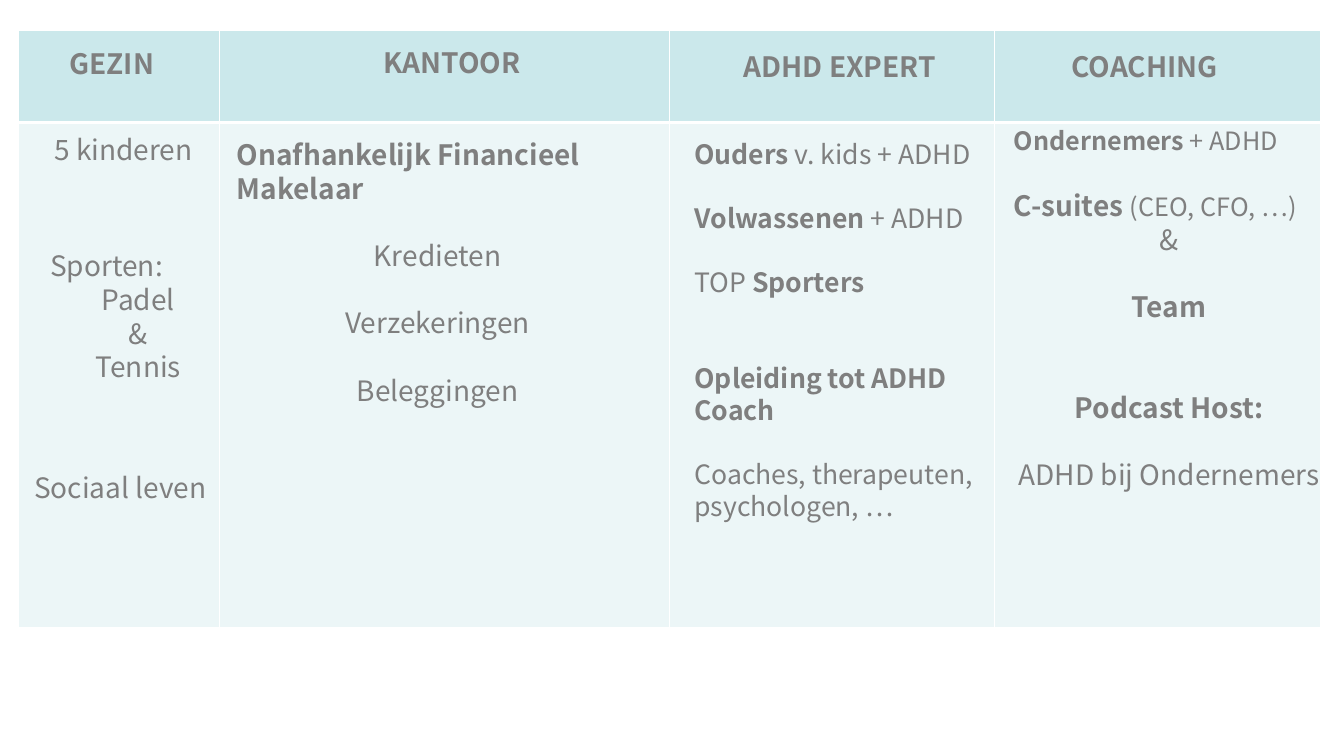
from lxml.etree import SubElement
from pptx import Presentation
from pptx.dml.color import RGBColor
from pptx.enum.text import MSO_AUTO_SIZE, PP_ALIGN
from pptx.oxml.ns import qn
from pptx.util import Pt

COLORS = {"text": "7F7F7F", "head": "CBE8EB", "body": "ECF6F7", "border": "FFFFFF"}
FONT = "Noto Sans CJK JP"
LEFT, CENTER = PP_ALIGN.LEFT, PP_ALIGN.CENTER
BOARD = (13, 21.6, 930, 427)
COL_WIDTHS = (144, 321, 232.5, 232.5)
ROW_HEIGHTS = (66, 361)


def line(text, bold=False, size=20, align=LEFT, gap=0):
    """Describe a paragraph made of one run."""
    return align, gap, [(text, bold, size)]


def mixed(*runs, gap=0):
    """Describe a left-aligned paragraph made of several runs."""
    return LEFT, gap, runs


def centred(text, bold=False, gap=0):
    """Describe a centred 20 pt paragraph."""
    return line(text, bold, align=CENTER, gap=gap)


FAMILY = [
    ((29.5, 8, 89, 32), [line("GEZIN", True)]),
    ((18.7, 69.8, 114.5, 32), [line("5 kinderen")]),
    ((15.8, 152.6, 140, 104),
     [line("Sporten:"), centred("Padel"), centred("&"), centred("Tennis")]),
    ((4.3, 311, 140, 32), [line("Sociaal leven")]),
]
BROKER = [
    ((110, 7.2, 122, 32), [line("KANTOOR", True)]),
    ((5, 73.4, 301, 225), [
        line("Onafhankelijk Financieel Makelaar", True),
        centred("Kredieten", gap=24),
        centred("Verzekeringen", gap=24),
        centred("Beleggingen", gap=24),
    ]),
]
EXPERT = [
    ((46, 10, 178.5, 32), [line("ADHD EXPERT", True)]),
    ((11, 73.4, 228, 307), [
        mixed(("Ouders", True, 19), (" v. kids + ADHD", False, 19)),
        mixed(("Volwassenen", True, 19), (" + ADHD", False, 19), gap=23),
        mixed(("TOP ", False, 19), ("Sporters", True, 19), gap=23),
        line("Opleiding tot ADHD Coach", True, 19, gap=46),
        line("Coaches, therapeuten, psychologen, …", size=19, gap=23),
    ]),
]
HOST = [
    ((47.7, 10, 178.5, 32), [line("COACHING", True)]),
    ((6.6, 64.1, 236, 271), [
        mixed(("Ondernemers", True, 18), (" + ADHD", False, 18)),
        mixed(("C-suites ", True, 20), ("(CEO, CFO, …)", False, 18), gap=24),
        centred("&"),
        centred("Team", True, gap=24),
        centred("Podcast Host:", True, gap=48),
        centred("ADHD bij Ondernemers", gap=24),
    ]),
]


def style_cell(cell, fill, widths):
    """Give a cell its fill and its four border widths."""
    tc_pr = cell._tc.get_or_add_tcPr()
    for side, width in zip("LRTB", widths):
        ln = SubElement(tc_pr, qn(f"a:ln{side}"), w=str(Pt(width)))
        solid = SubElement(ln, qn("a:solidFill"))
        SubElement(solid, qn("a:srgbClr"), val=COLORS["border"])
    cell.fill.solid()
    cell.fill.fore_color.rgb = RGBColor.from_string(COLORS[fill])


def add_board(slide, box):
    """Draw the empty two-row table behind the texts."""
    table = slide.shapes.add_table(2, len(COL_WIDTHS), *map(Pt, box)).table
    for col, width in zip(table.columns, COL_WIDTHS):
        col.width = Pt(width)
    styles = (("head", (1, 1, 1, 3)), ("body", (1, 1, 3, 1)))
    for row, height, (fill, widths) in zip(table.rows, ROW_HEIGHTS, styles):
        row.height = Pt(height)
        for cell in row.cells:
            style_cell(cell, fill, widths)


def add_text(slide, box, paragraphs):
    """Write paragraphs into a wrapping text box."""
    tf = slide.shapes.add_textbox(*map(Pt, box)).text_frame
    tf.word_wrap = True
    tf.auto_size = MSO_AUTO_SIZE.SHAPE_TO_FIT_TEXT
    for i, (align, gap, runs) in enumerate(paragraphs):
        p = tf.add_paragraph() if i else tf.paragraphs[0]
        p.alignment = align
        if gap:
            p.space_before = Pt(gap)
        for text, bold, size in runs:
            r = p.add_run()
            r.text = text
            r.font.name, r.font.size, r.font.bold = FONT, Pt(size), bold
            r.font.color.rgb = RGBColor.from_string(COLORS["text"])


def add_column(slide, box, blocks):
    """Place a heading and its texts relative to a column's box."""
    left, top = box[:2]
    for (dx, dy, width, height), paragraphs in blocks:
        add_text(slide, (left + dx, top + dy, width, height), paragraphs)


def main():
    """Build the slide and save it."""
    prs = Presentation()
    prs.slide_width, prs.slide_height = Pt(960), Pt(540)
    slide = prs.slides.add_slide(prs.slide_layouts[6])
    add_board(slide, BOARD)
    left, top, _, height = BOARD
    for width, blocks in zip(COL_WIDTHS, (FAMILY, BROKER, EXPERT, HOST)):
        add_column(slide, (left, top, width, height), blocks)
        left += width
    prs.save("out.pptx")


if __name__ == "__main__":
    main()
